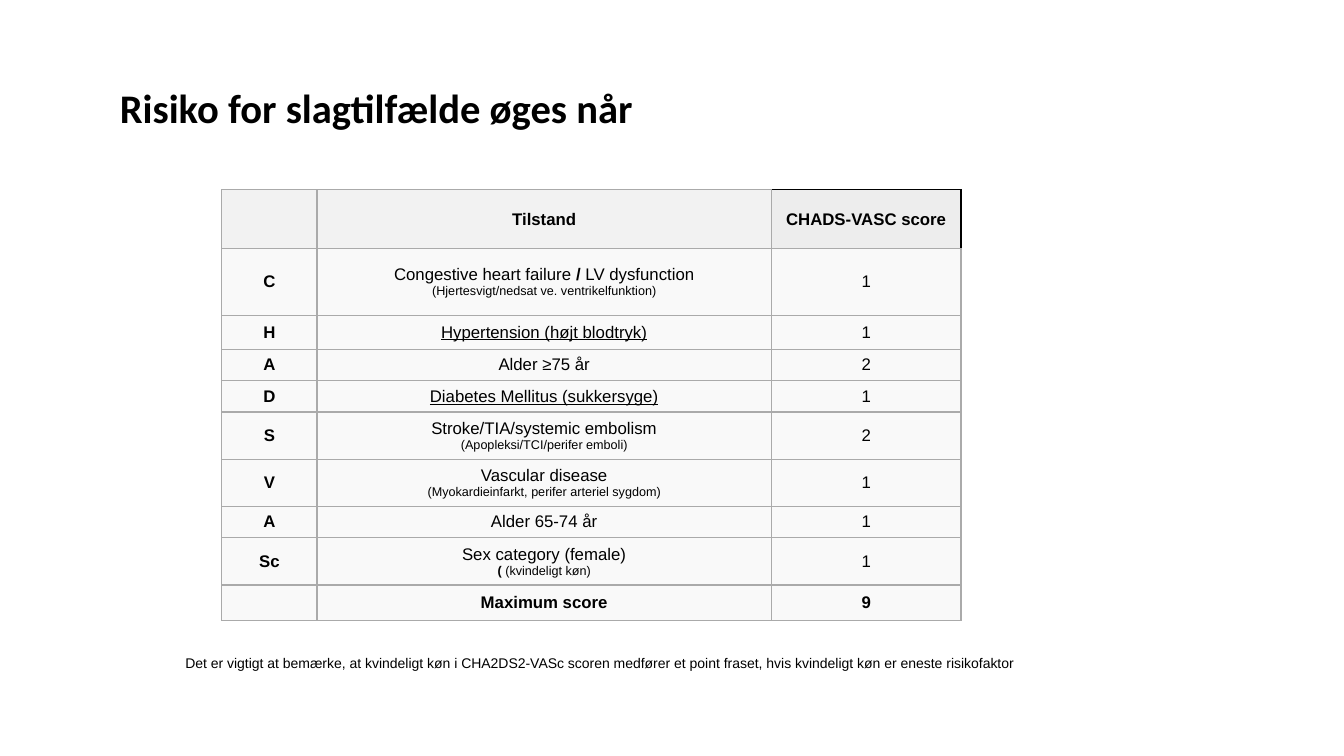
import pptx
import pptx.util
import pptx.dml.color
import pptx.enum.text
import pptx.oxml
from lxml import etree
from pptx.oxml.ns import qn

TITLE = "Risiko for slagtilfælde øges når"
NOTE = ("Det er vigtigt at bemærke, at kvindeligt køn i CHA2DS2-VASc scoren medfører "
        "et point fraset, hvis kvindeligt køn er eneste risikofaktor")
HEADER = ("", "Tilstand", "CHADS-VASC score")
# Letter, condition as (text, bold) runs, detail as (text, bold) runs, score, row height in cm
RISKS = [
    ("C", [("Congestive heart failure ", False), ("/ ", True), ("LV dysfunction", False)],
     [("(Hjertesvigt/nedsat ve. ventrikelfunktion)", False)], "1", 1.67),
    ("H", [("Hypertension (højt blodtryk)", False)], [], "1", 0.86),
    ("A", [("Alder ≥75 år", False)], [], "2", 0.79),
    ("D", [("Diabetes Mellitus (sukkersyge)", False)], [], "1", 0.79),
    ("S", [("Stroke/TIA/systemic embolism", False)],
     [("(Apopleksi/TCI/perifer emboli)", False)], "2", 1.19),
    ("V", [("Vascular disease", False)],
     [("(Myokardieinfarkt, perifer arteriel sygdom)", False)], "1", 1.19),
    ("A", [("Alder 65-74 år", False)], [], "1", 0.79),
    ("Sc", [("Sex category (female)", False)],
     [("(", True), (" (kvindeligt køn)", False)], "1", 1.19),
]
TOTAL = ("", "Maximum score", "9")
UNDERLINED = {"H", "D"}
COL_WIDTHS = (2.4, 11.45, 4.78)
HEADER_HEIGHT, TOTAL_HEIGHT = 1.49, 0.89

THEME = {
    "heading_font": "Calibri", "body_font": "Arial",
    "title": 29, "body": 12, "detail": 9, "note": 10,
    "ink": "000000", "grid": "AAAAAA",
    "header": "F2F2F2", "score_header": "EDEDED", "row": "F9F9F9",
}
Cm, Pt = pptx.util.Cm, pptx.util.Pt
RGB = pptx.dml.color.RGBColor.from_string
CENTER = pptx.enum.text.PP_ALIGN.CENTER
MIDDLE = pptx.enum.text.MSO_ANCHOR.MIDDLE


def style(p, size, font="body_font", bold=False, underline=False):
    p.font.name, p.font.size = THEME[font], Pt(THEME[size])
    p.font.bold, p.font.underline = bold, underline
    p.font.color.rgb = RGB(THEME["ink"])


def add_line(s, box, text, size, font="body_font", bold=False, wrap=True):
    """Add a one-paragraph text box; box is left, top, width, height in cm."""
    tf = s.shapes.add_textbox(*map(Cm, box)).text_frame
    tf.word_wrap, tf.vertical_anchor = wrap, MIDDLE
    p = tf.paragraphs[0]
    p.text = text
    style(p, size, font, bold)
    return p


def draw_borders(cell, black_sides=""):
    tc_pr = cell._tc.get_or_add_tcPr()
    for side in "LRTB":
        ln = etree.SubElement(tc_pr, qn(f"a:ln{side}"), w=str(Pt(1)))
        fill = etree.SubElement(ln, qn("a:solidFill"))
        color = THEME["ink" if side in black_sides else "grid"]
        etree.SubElement(fill, qn("a:srgbClr"), val=color)


def fill_cell(cell, lines, fill, underline=False, black_sides=""):
    """Write the lines, each a list of (text, bold) runs; later lines are details."""
    cell.vertical_anchor = MIDDLE
    cell.margin_top = cell.margin_bottom = Cm(0.05)
    draw_borders(cell, black_sides)
    cell.fill.solid()
    cell.fill.fore_color.rgb = RGB(THEME[fill])
    tf = cell.text_frame
    for i, runs in enumerate(lines):
        p = tf.add_paragraph() if i else tf.paragraphs[0]
        p.alignment = CENTER
        style(p, "detail" if i else "body", bold=runs[0][1], underline=underline)
        for text, bold in runs:
            if text:
                r = p.add_run()
                r.text = text
                if len(runs) > 1:
                    r.font.bold = bold


def add_score_table(s):
    heights = [HEADER_HEIGHT, *(risk[-1] for risk in RISKS), TOTAL_HEIGHT]
    frame = s.shapes.add_table(len(heights), len(COL_WIDTHS), Cm(5.59), Cm(4.78),
                               Cm(sum(COL_WIDTHS)), Cm(sum(heights)))
    table = frame.table
    table.first_row = table.horz_banding = False
    for col, width in zip(table.columns, COL_WIDTHS):
        col.width = Cm(width)
    for row, height in zip(table.rows, heights):
        row.height = Cm(height)

    last_col, last_row = len(COL_WIDTHS) - 1, len(heights) - 1
    for c, (head, total) in enumerate(zip(HEADER, TOTAL)):
        is_score = c == last_col
        fill_cell(table.cell(0, c), [[(head, True)]],
                  "score_header" if is_score else "header",
                  black_sides="TR" if is_score else "")
        fill_cell(table.cell(last_row, c), [[(total, True)]], "row")
    for n, (letter, condition, detail, score, _) in enumerate(RISKS, 1):
        fill_cell(table.cell(n, 0), [[(letter, True)]], "row")
        fill_cell(table.cell(n, 1), [condition, detail] if detail else [condition],
                  "row", underline=letter in UNDERLINED)
        fill_cell(table.cell(n, 2), [[(score, False)]], "row")


def main():
    prs = pptx.Presentation()
    prs.slide_width, prs.slide_height = Cm(33.87), Cm(19.05)
    s = prs.slides.add_slide(prs.slide_layouts[6])
    title = add_line(s, (2.77, 1.73, 20.12, 2.11), TITLE, "title", "heading_font", bold=True)
    title.line_spacing = 0.9
    add_score_table(s)
    add_line(s, (4.42, 16.36, 21.49, 0.69), NOTE, "note", wrap=False)
    prs.save("out.pptx")


if __name__ == "__main__":
    main()
